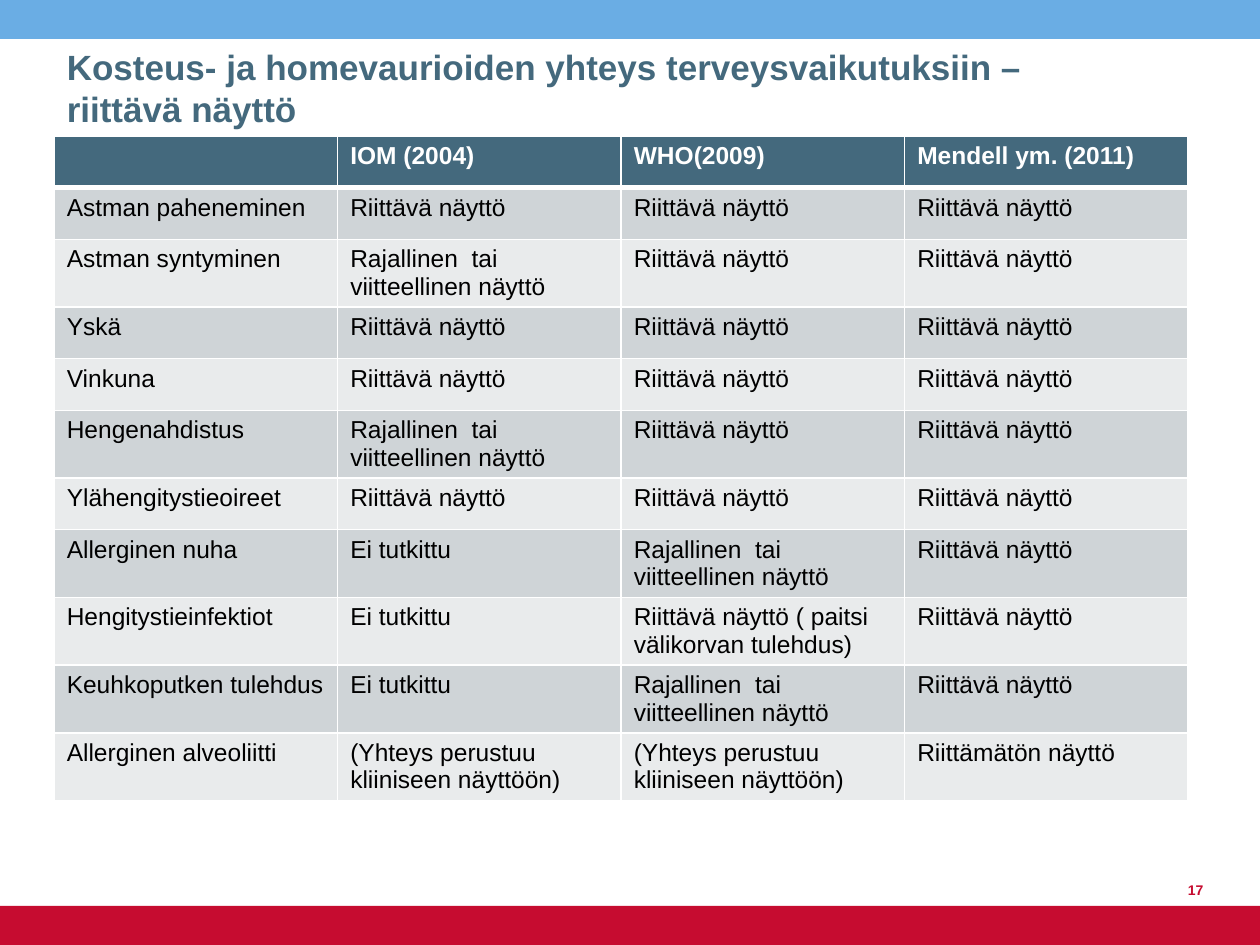
from lxml.etree import SubElement
from pptx import Presentation
from pptx.dml.color import RGBColor
from pptx.enum.shapes import MSO_SHAPE
from pptx.enum.text import MSO_ANCHOR, MSO_AUTO_SIZE, PP_ALIGN
from pptx.oxml.ns import qn
from pptx.util import Inches, Pt

TITLE = "Kosteus- ja homevaurioiden yhteys terveysvaikutuksiin – riittävä näyttö"
PAGE_NUMBER = "17"

SUFFICIENT = "Riittävä näyttö"
LIMITED = "Rajallinen  tai viitteellinen näyttö"
NOT_STUDIED = "Ei tutkittu"
CLINICAL = "(Yhteys perustuu kliiniseen näyttöön)"
EVIDENCE = [
    ("", "IOM (2004)", "WHO(2009)", "Mendell ym. (2011)"),
    ("Astman paheneminen", SUFFICIENT, SUFFICIENT, SUFFICIENT),
    ("Astman syntyminen", LIMITED, SUFFICIENT, SUFFICIENT),
    ("Yskä", SUFFICIENT, SUFFICIENT, SUFFICIENT),
    ("Vinkuna", SUFFICIENT, SUFFICIENT, SUFFICIENT),
    ("Hengenahdistus", LIMITED, SUFFICIENT, SUFFICIENT),
    ("Ylähengitystieoireet", SUFFICIENT, SUFFICIENT, SUFFICIENT),
    ("Allerginen nuha", NOT_STUDIED, LIMITED, SUFFICIENT),
    ("Hengitystieinfektiot", NOT_STUDIED,
     "Riittävä näyttö ( paitsi välikorvan tulehdus)", SUFFICIENT),
    ("Keuhkoputken tulehdus", NOT_STUDIED, LIMITED, SUFFICIENT),
    ("Allerginen alveoliitti", CLINICAL, CLINICAL, "Riittämätön näyttö"),
]

SLIDE_WIDTH, SLIDE_HEIGHT = 10, 7.5
BAND_HEIGHT = 0.31
LEFT, TABLE_TOP = 0.43, 1.08
COLUMN_WIDTH, ROW_HEIGHT = 2.25, 0.41
BLUE, RED, SLATE = "6AADE4", "C60C30", "44697D"
WHITE, BLACK = "FFFFFF", "000000"
STRIPES = ("E9EBEC", "CFD4D7")


def color(hex_value):
    return RGBColor.from_string(hex_value)


def style_font(font, size, hex_value, bold=False):
    font.name = "Arial"
    font.size = Pt(size)
    font.bold = bold
    font.color.rgb = color(hex_value)


def add_band(slide, top, hex_value):
    band = slide.shapes.add_shape(
        MSO_SHAPE.RECTANGLE, 0, Inches(top), Inches(SLIDE_WIDTH), Inches(BAND_HEIGHT))
    band.shadow.inherit = False
    band.fill.solid()
    band.fill.fore_color.rgb = color(hex_value)
    band.line.fill.background()


def set_borders(cell, bottom_width):
    """Draw white borders; they must precede the cell's fill in the XML."""
    properties = cell._tc.get_or_add_tcPr()
    for side, width in (("L", 1), ("R", 1), ("T", 1), ("B", bottom_width)):
        line = SubElement(properties, qn(f"a:ln{side}"), w=str(Pt(width)))
        fill = SubElement(line, qn("a:solidFill"))
        SubElement(fill, qn("a:srgbClr"), val=WHITE)


def add_evidence_table(slide):
    row_count, column_count = len(EVIDENCE), len(EVIDENCE[0])
    table = slide.shapes.add_table(
        row_count, column_count, Inches(LEFT), Inches(TABLE_TOP),
        Inches(COLUMN_WIDTH * column_count), Inches(ROW_HEIGHT * row_count)).table
    for row_index, values in enumerate(EVIDENCE):
        is_header = row_index == 0
        for column_index, value in enumerate(values):
            cell = table.cell(row_index, column_index)
            set_borders(cell, 3 if row_index == 0 else 1)
            cell.fill.solid()
            cell.fill.fore_color.rgb = color(SLATE if is_header else STRIPES[row_index % 2])
            cell.text = value
            style_font(cell.text_frame.paragraphs[0].font, 14,
                       WHITE if is_header else BLACK, is_header)


def add_title(slide):
    title = slide.shapes.title
    title.left, title.top = Inches(LEFT), Inches(0.56)
    title.width, title.height = Inches(8.58), Inches(0.52)
    frame = title.text_frame
    frame.text = TITLE
    frame.word_wrap = True
    frame.auto_size = MSO_AUTO_SIZE.NONE
    frame.vertical_anchor = MSO_ANCHOR.BOTTOM
    paragraph = frame.paragraphs[0]
    paragraph.alignment = PP_ALIGN.LEFT
    style_font(paragraph.runs[0].font, 20, SLATE, True)


def add_page_number(slide):
    box = slide.shapes.add_textbox(Inches(9.1), Inches(6.78), Inches(0.55), Inches(0.4))
    frame = box.text_frame
    frame.text = PAGE_NUMBER
    frame.word_wrap = True
    frame.vertical_anchor = MSO_ANCHOR.BOTTOM
    paragraph = frame.paragraphs[0]
    paragraph.alignment = PP_ALIGN.RIGHT
    style_font(paragraph.runs[0].font, 8, RED, True)


def main():
    presentation = Presentation()
    presentation.slide_width = Inches(SLIDE_WIDTH)
    presentation.slide_height = Inches(SLIDE_HEIGHT)
    slide = presentation.slides.add_slide(presentation.slide_layouts[5])
    add_band(slide, 0, BLUE)
    add_band(slide, SLIDE_HEIGHT - BAND_HEIGHT, RED)
    add_evidence_table(slide)
    add_title(slide)
    add_page_number(slide)
    presentation.save("out.pptx")


if __name__ == "__main__":
    main()
